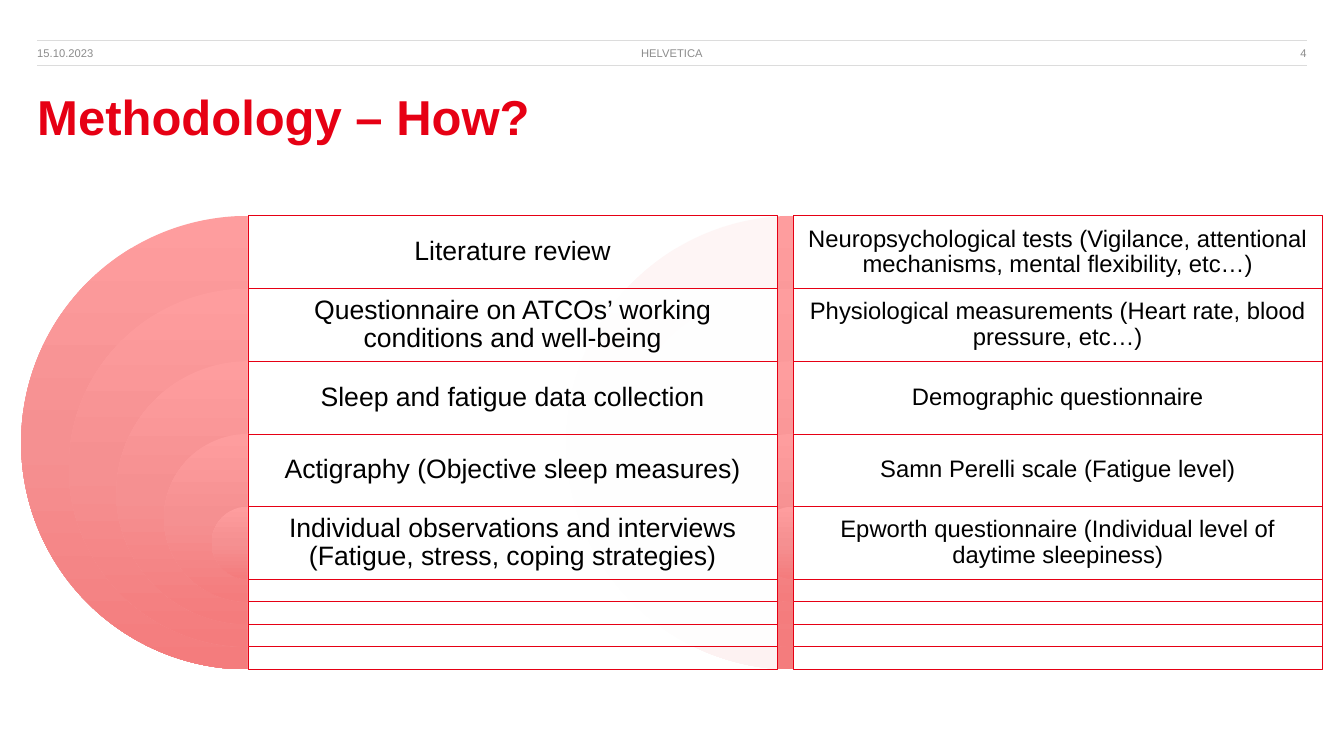
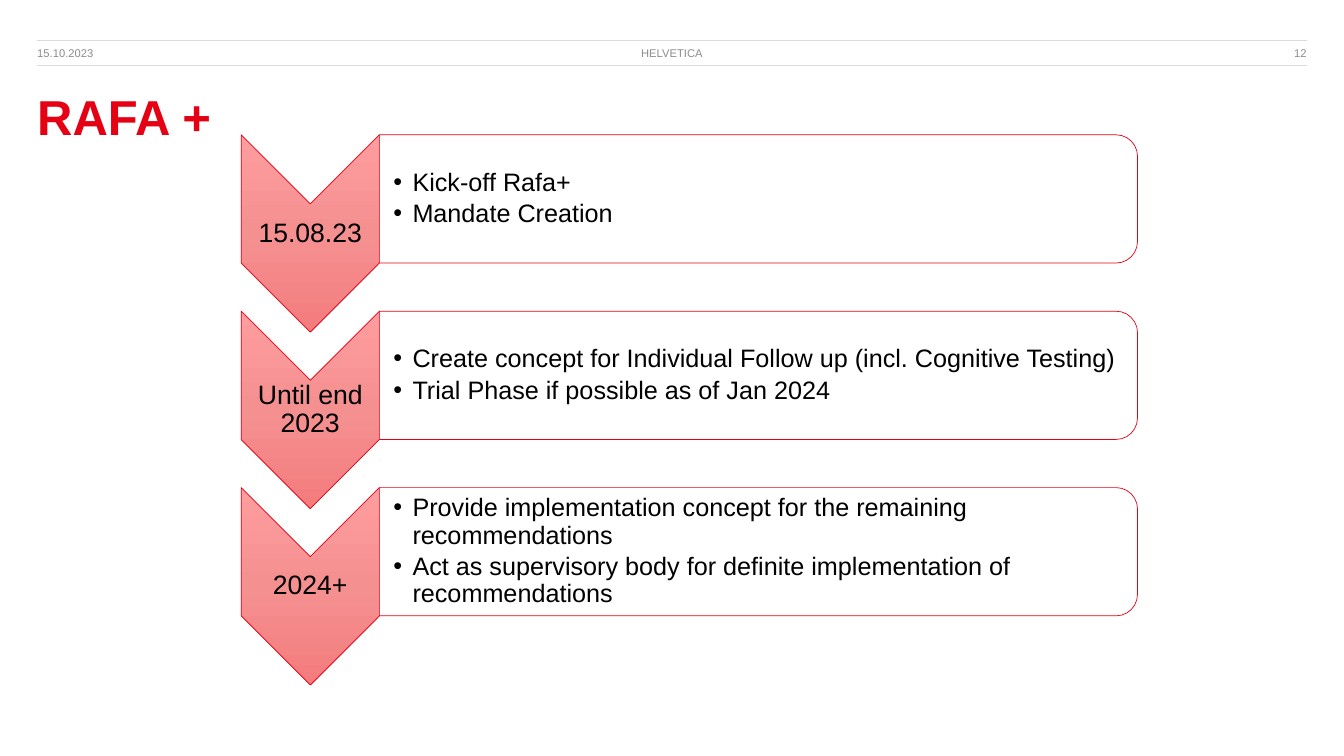
import pptx
import pptx.dml.color
import pptx.enum.shapes
import pptx.enum.text
import pptx.oxml
import pptx.oxml.ns
import pptx.util

Pt = pptx.util.Pt
SHAPE = pptx.enum.shapes.MSO_SHAPE
ALIGN = pptx.enum.text.PP_ALIGN
ANCHOR = pptx.enum.text.MSO_ANCHOR
qn = pptx.oxml.ns.qn

# Shared style
FONT = "Arial"
RED, BLACK, WHITE = "E60014", "000000", "FFFFFF"
GREY, RULE = "8C8C8C", "DCDCDC"
GRADIENT = ((0, "FE9D9E"), (50, "F59091"), (100, "F47C7D"))
SLIDE_W, SLIDE_H = 960, 540
MARGIN = 26.6
CONTENT_W = SLIDE_W - 2 * MARGIN
HEADER_TOP, HEADER_H = 28.8, 18
HEADER_CELL_W = 292.4


def color(value):
    return pptx.dml.color.RGBColor.from_string(value)


def xml(tag, body="", **attrs):
    """Make one DrawingML element."""
    listed = "".join(f' {k}="{v}"' for k, v in attrs.items())
    ns = pptx.oxml.ns.nsdecls("a")
    return pptx.oxml.parse_xml(f"<a:{tag} {ns}{listed}>{body}</a:{tag}>")


def format_text(tf, size, ink, align=ALIGN.LEFT, anchor=ANCHOR.MIDDLE,
                insets=(0, 0, 0, 0), bold=False, spacing=None):
    tf.word_wrap = True
    tf.auto_size = pptx.enum.text.MSO_AUTO_SIZE.NONE
    tf.vertical_anchor = anchor
    tf.margin_left, tf.margin_top, tf.margin_right, tf.margin_bottom = map(Pt, insets)
    for p in tf.paragraphs:
        p.alignment = align
        if spacing:
            p.line_spacing = spacing
        for r in p.runs:
            r.font.name, r.font.size, r.font.bold = FONT, Pt(size), bold
            r.font.color.rgb = color(ink)


def add_text(slide, box, text, size, ink=BLACK, **style):
    sp = slide.shapes.add_textbox(*map(Pt, box))
    sp.text_frame.text = text
    format_text(sp.text_frame, size, ink, **style)
    return sp


def add_shape(slide, kind, box, line=None, turned=False):
    """Add a preset shape; a turned one is rotated 90° and still fills box."""
    x, y, w, h = box
    if turned:
        x, y, w, h = x + (w - h) / 2, y + (h - w) / 2, h, w
    sp = slide.shapes.add_shape(kind, Pt(x), Pt(y), Pt(w), Pt(h))
    sp.rotation = 90 if turned else 0
    sp.shadow.inherit = False
    if line:
        sp.line.color.rgb = color(line)
        sp.line.width = Pt(0.5)
    else:
        sp.line.fill.background()
    return sp


def fill_gradient(sp):
    """Fill from top to bottom, whatever the rotation of the shape."""
    stops = "".join(f'<a:gs pos="{pos * 1000}"><a:srgbClr val="{c}"/></a:gs>'
                    for pos, c in GRADIENT)
    body = f'<a:gsLst>{stops}</a:gsLst><a:lin ang="5400000" scaled="0"/>'
    geometry = sp.element.spPr.find(qn("a:prstGeom"))
    geometry.addnext(xml("gradFill", body, rotWithShape=0))


def fill_veil(sp):
    """Fill with white at 90 % opacity."""
    sp.fill.solid()
    sp.fill.fore_color.rgb = color(WHITE)
    clr = sp.element.spPr.find(qn("a:solidFill")).find(qn("a:srgbClr"))
    clr.append(xml("alpha", val=90000))


def add_rule(slide, y):
    ln = slide.shapes.add_connector(pptx.enum.shapes.MSO_CONNECTOR.STRAIGHT,
                                    Pt(MARGIN), Pt(y), Pt(SLIDE_W - MARGIN), Pt(y))
    ln.line.color.rgb = color(RULE)
    ln.line.width = Pt(0.5)
    ln.element.spPr.append(xml("effectLst"))


def add_slide(prs, title, number):
    """Add a slide with the shared header band and title."""
    slide = prs.slides.add_slide(prs.slide_layouts[5])
    # Header band
    for y in (HEADER_TOP, HEADER_TOP + HEADER_H):
        add_rule(slide, y)
    cells = (("15.10.2023", ALIGN.LEFT), ("HELVETICA", ALIGN.CENTER),
             (str(number), ALIGN.RIGHT))
    step = (CONTENT_W - HEADER_CELL_W) / 2
    for i, (text, align) in enumerate(cells):
        box = (MARGIN + i * step, HEADER_TOP, HEADER_CELL_W, HEADER_H)
        add_text(slide, box, text, 8, GREY, align=align)
    # Title
    sp = slide.shapes.title
    sp.left, sp.top, sp.width, sp.height = map(Pt, (MARGIN, 66.2, CONTENT_W, 39))
    sp.text_frame.text = title
    format_text(sp.text_frame, 35, RED, anchor=ANCHOR.TOP, bold=True, spacing=0.9)
    return slide


def add_target_list(slide, box, items, size, inset):
    """Nested half discs along the left edge of box, one text row for each."""
    x, y, w, h = box
    row_h = 51.9
    shrink = (h - row_h) / (len(items) - 1)
    for i, text in enumerate(items):
        top, d = y + i * row_h, h - i * shrink
        disc = add_shape(slide, SHAPE.PIE, (x - d / 2, top, d, d))
        disc.adjustments[0], disc.adjustments[1] = 54, 162
        fill_gradient(disc)
        fill_veil(add_shape(slide, SHAPE.RECTANGLE, (x, top, w, d), RED))
        add_text(slide, (x, top, w, row_h), text, size, align=ALIGN.CENTER,
                 insets=(inset,) * 4, spacing=0.9)


def add_bullets(slide, box, items):
    sp = add_text(slide, box, "\n".join(items), 18, insets=(10, 1, 1, 1), spacing=0.9)
    indent = Pt(13.7)
    for p in sp.text_frame.paragraphs:
        p.space_after = Pt(3)
        pPr = p._p.get_or_add_pPr()
        pPr.set("marL", str(indent))
        pPr.set("indent", str(-indent))
        pPr.append(xml("buFont", typeface=FONT))
        pPr.append(xml("buChar", char="•"))


def add_step(slide, box, date, items):
    """A downward chevron with a date, and a rounded panel to its right."""
    x, y, w, h = box
    chevron_w, panel_h = 98.7, 91.6
    chevron = add_shape(slide, SHAPE.CHEVRON, (x, y, chevron_w, h), RED, turned=True)
    fill_gradient(chevron)
    add_text(slide, (x, y + chevron_w / 2, chevron_w, h - chevron_w), date, 19,
             align=ALIGN.CENTER, insets=(1,) * 4, spacing=0.9)
    panel_x, panel_w = x + chevron_w, w - chevron_w
    panel = add_shape(slide, SHAPE.ROUND_2_SAME_RECTANGLE,
                      (panel_x, y, panel_w, panel_h), RED, turned=True)
    fill_veil(panel)
    add_bullets(slide, (panel_x, y + 4.5, panel_w - 4.5, panel_h - 9), items)


def methodology_slide(prs):
    slide = add_slide(prs, "Methodology – How?", 4)
    top, w, h = 154.2, 378, 324
    tests = (
        "Neuropsychological tests (Vigilance, attentional mechanisms, "
        "mental flexibility, etc…)",
        "Physiological measurements (Heart rate, blood pressure, etc…)",
        "Demographic questionnaire",
        "Samn Perelli scale (Fatigue level)",
        "Epworth questionnaire (Individual level of daytime sleepiness)",
    )
    studies = (
        "Literature review",
        "Questionnaire on ATCOs’ working conditions and well-being",
        "Sleep and fatigue data collection",
        "Actigraphy (Objective sleep measures)",
        "Individual observations and interviews "
        "(Fatigue, stress, coping strategies)",
    )
    # The left list lies over the discs of the right one
    add_target_list(slide, (566.6, top, w, h), tests, 17, 5)
    add_target_list(slide, (177.1, top, w, h), studies, 19, 5.8)


def roadmap_slide(prs):
    slide = add_slide(prs, "RAFA +", 12)
    steps = (
        ("15.08.23", ("Kick-off Rafa+", "Mandate Creation")),
        ("Until end 2023",
         ("Create concept for Individual Follow up (incl. Cognitive Testing)",
          "Trial Phase if possible as of Jan 2024")),
        ("2024+",
         ("Provide implementation concept for the remaining recommendations",
          "Act as supervisory body for definite implementation of recommendations")),
    )
    for i, (date, items) in enumerate(steps):
        add_step(slide, (172.3, 96.3 + i * 126, 640.2, 141), date, items)


def main():
    prs = pptx.Presentation()
    prs.slide_width, prs.slide_height = Pt(SLIDE_W), Pt(SLIDE_H)
    methodology_slide(prs)
    roadmap_slide(prs)
    prs.save("out.pptx")


if __name__ == "__main__":
    main()
